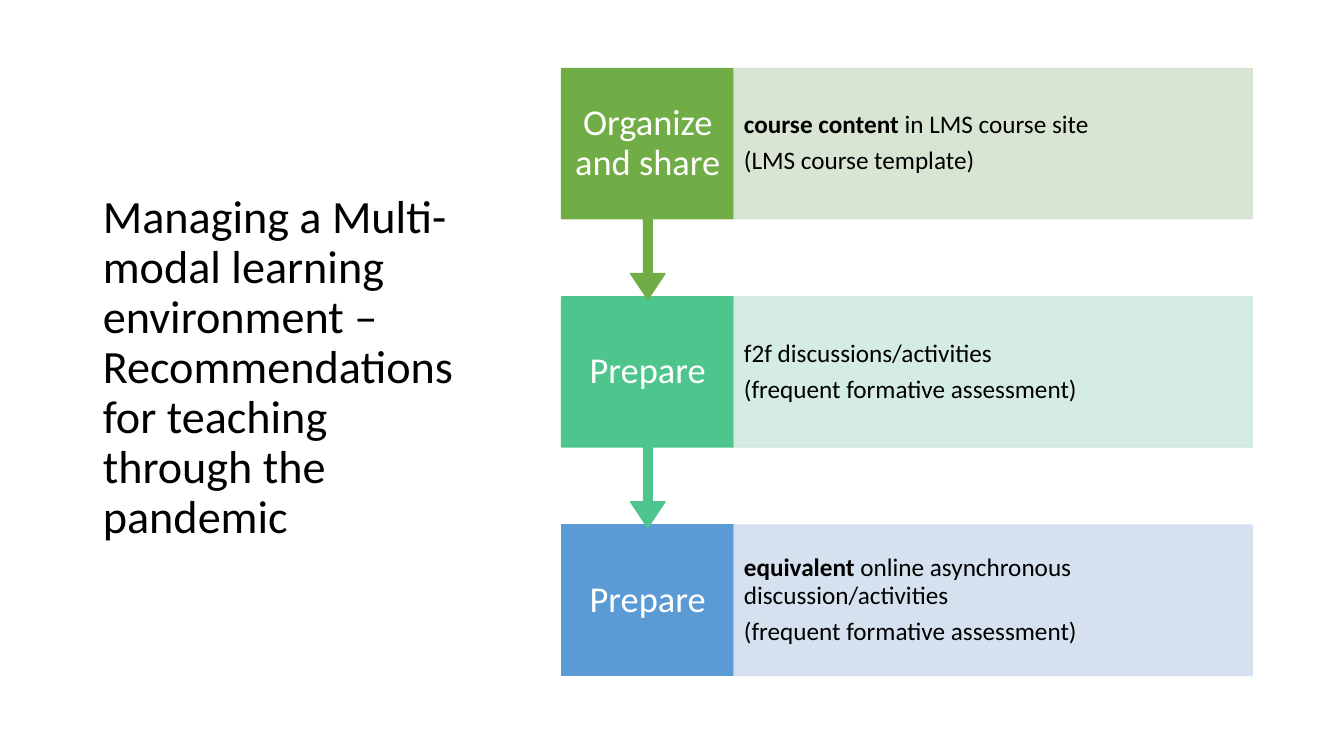
import pptx
import pptx.util
import pptx.dml.color
import pptx.enum.shapes
import pptx.enum.text
import pptx.oxml.ns
import lxml.etree

Inches = pptx.util.Inches
Pt = pptx.util.Pt
RGBColor = pptx.dml.color.RGBColor
SHAPE = pptx.enum.shapes.MSO_SHAPE
ALIGN = pptx.enum.text.PP_ALIGN

FONT = "Calibri"
BLACK = RGBColor(0x00, 0x00, 0x00)
WHITE = RGBColor(0xFF, 0xFF, 0xFF)
GREEN = RGBColor(0x70, 0xAD, 0x47)
PALE_GREEN = RGBColor(0xD5, 0xE3, 0xCF)
TEAL = RGBColor(0x4D, 0xC5, 0x8D)
PALE_TEAL = RGBColor(0xD0, 0xEA, 0xE1)
BLUE = RGBColor(0x5B, 0x9B, 0xD5)
PALE_BLUE = RGBColor(0xD2, 0xDE, 0xEF)

STEP_LEFT, STEP_TOP, STEP_PITCH = 5.57, 0.68, 2.265
STEP_WIDTH, STEP_HEIGHT, CALLOUT_HEIGHT = 1.71, 1.49, 2.29
DETAIL_WIDTH = 5.14
CALLOUT_ADJUSTMENTS = (0.05, 0.1, 0.15, 0.65)

TITLE = ("Managing a Multi-modal learning environment – "
         "Recommendations for teaching through the pandemic")

# Label, strong colour, pale colour, detail paragraphs of (text, bold) runs
STEPS = [
    ("Organize and share", GREEN, PALE_GREEN,
     [[("course content ", True), ("in LMS course site", False)],
      [("(LMS course template)", False)]]),
    ("Prepare", TEAL, PALE_TEAL,
     [[("f2f discussions/activities", False)],
      [("(frequent formative assessment)", False)]]),
    ("Prepare", BLUE, PALE_BLUE,
     [[("equivalent", True),
       (" online asynchronous discussion/activities", False)],
      [("(frequent formative assessment)", False)]]),
]


def write_text(frame, paragraphs, size, color, align, space_after=0):
    frame.word_wrap = True
    frame.auto_size = pptx.enum.text.MSO_AUTO_SIZE.NONE
    frame.vertical_anchor = pptx.enum.text.MSO_ANCHOR.MIDDLE
    for index, runs in enumerate(paragraphs):
        paragraph = frame.add_paragraph() if index else frame.paragraphs[0]
        paragraph.alignment = align
        paragraph.line_spacing = 0.9
        paragraph.space_before = Pt(0)
        paragraph.space_after = Pt(space_after)
        for text, bold in runs:
            run = paragraph.add_run()
            run.text = text
            run.font.name = FONT
            run.font.size = Pt(size)
            run.font.bold = bold
            run.font.color.rgb = color


def add_block(slide, kind, left, top, width, height, color, opacity=100):
    block = slide.shapes.add_shape(
        kind, Inches(left), Inches(top), Inches(width), Inches(height))
    block.shadow.inherit = False
    block.fill.solid()
    block.fill.fore_color.rgb = color
    block.line.color.rgb = color
    block.line.width = Pt(1)
    if opacity < 100:
        qn = pptx.oxml.ns.qn
        for rgb in block.element.spPr.iter(qn("a:srgbClr")):
            alpha = lxml.etree.SubElement(rgb, qn("a:alpha"))
            alpha.set("val", str(opacity * 1000))
    return block


def set_margins(frame, side, vertical):
    frame.margin_left = frame.margin_right = Inches(side)
    frame.margin_top = frame.margin_bottom = Inches(vertical)


def add_title(slide):
    title = slide.shapes.title
    title.left, title.top = Inches(0.92), Inches(0.61)
    title.width, title.height = Inches(3.69), Inches(6.09)
    set_margins(title.text_frame, 0.1, 0.05)
    write_text(title.text_frame, [[(TITLE, False)]], 33, BLACK, ALIGN.LEFT)


def add_step(slide, top, is_last, label, strong, pale, details):
    # Step label, with an arrow down to the next step
    if is_last:
        step = add_block(slide, SHAPE.RECTANGLE, STEP_LEFT, top,
                         STEP_WIDTH, STEP_HEIGHT, strong)
    else:
        step = add_block(slide, SHAPE.DOWN_ARROW_CALLOUT, STEP_LEFT, top,
                         STEP_WIDTH, CALLOUT_HEIGHT, strong)
        for index, value in enumerate(CALLOUT_ADJUSTMENTS):
            step.adjustments[index] = value
    set_margins(step.text_frame, 0.12, 0.2)
    write_text(step.text_frame, [[(label, False)]], 26, WHITE, ALIGN.CENTER)

    # Details beside the label
    detail = add_block(slide, SHAPE.RECTANGLE, STEP_LEFT + STEP_WIDTH, top,
                       DETAIL_WIDTH, STEP_HEIGHT, pale, opacity=90)
    set_margins(detail.text_frame, 0.1, 0.25)
    write_text(detail.text_frame, details, 18, BLACK, ALIGN.LEFT, 6.3)


def main():
    deck = pptx.Presentation()
    deck.slide_width, deck.slide_height = Inches(13.33), Inches(7.5)
    slide = deck.slides.add_slide(deck.slide_layouts[5])
    add_title(slide)

    # Last step first, so that each arrow tip lies over the step below
    last = len(STEPS) - 1
    for index in range(last, -1, -1):
        add_step(slide, STEP_TOP + index * STEP_PITCH, index == last,
                 *STEPS[index])
    deck.save("out.pptx")


if __name__ == "__main__":
    main()
